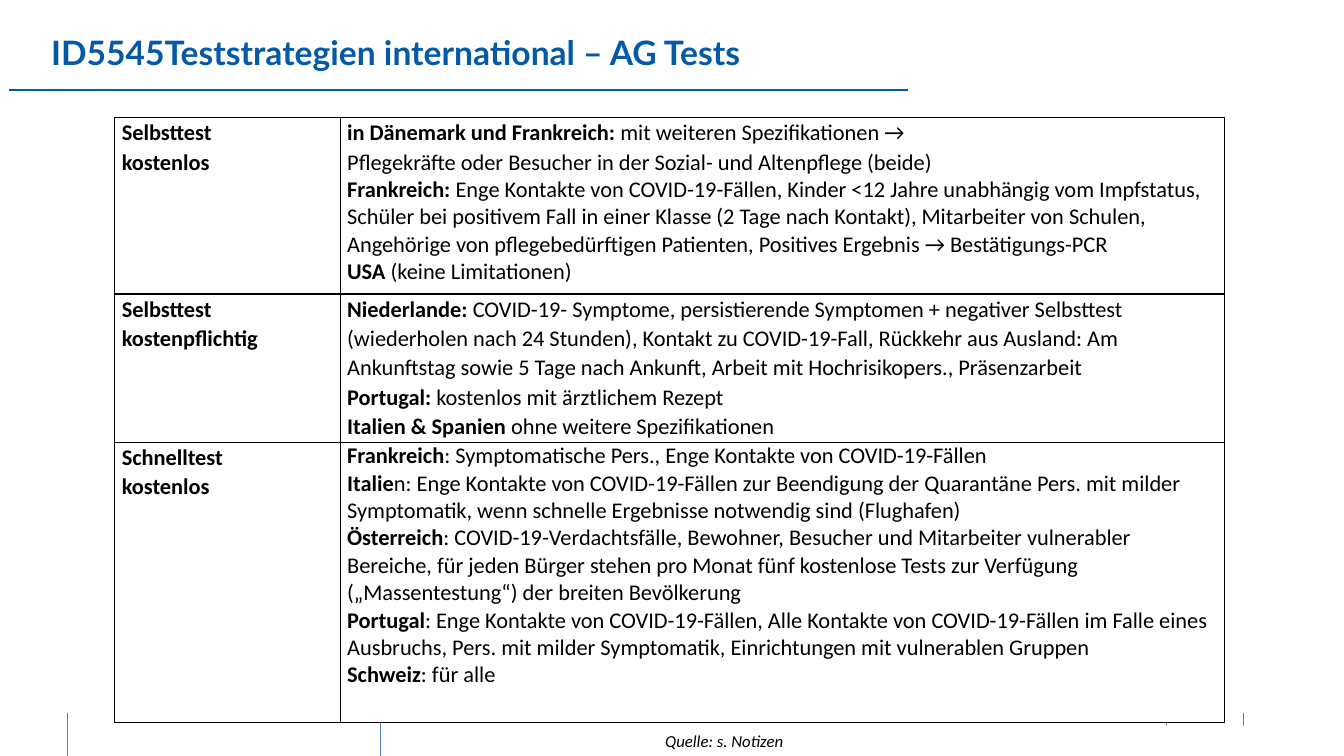
from dataclasses import dataclass

from lxml import etree
from pptx import Presentation
from pptx import util as u
from pptx.dml import color
from pptx.enum import shapes, text
from pptx.oxml import ns

Pt = u.Pt


@dataclass(frozen=True)
class Theme:
    """Colours, fonts and type sizes of the slide."""
    blue: str = "045AA6"
    tick: str = "4F81BD"
    ink: str = "000000"
    paper: str = "FFFFFF"
    head: str = "Lato"
    body: str = "Calibri"
    title_size: int = 24
    cell_size: int = 16
    source_size: int = 12
    loose: float = 1.07


T = Theme()

ROWS = [
    (126, ("Selbsttest", "kostenlos"), [
        (T.loose, "in Dänemark und Frankreich: ", "mit weiteren Spezifikationen →"),
        (T.loose, "", "Pflegekräfte oder Besucher in der Sozial- und Altenpflege (beide)"),
        (1.0, "Frankreich: ", "Enge Kontakte von COVID-19-Fällen, Kinder <12 Jahre unabhängig "
         "vom Impfstatus, Schüler bei positivem Fall in einer Klasse (2 Tage nach Kontakt), "
         "Mitarbeiter von Schulen, Angehörige von pflegebedürftigen Patienten, "
         "Positives Ergebnis → Bestätigungs-PCR"),
        (1.0, "USA", " (keine Limitationen)"),
    ]),
    (106, ("Selbsttest", "kostenpflichtig"), [
        (T.loose, "Niederlande: ", "COVID-19- Symptome, persistierende Symptomen + negativer "
         "Selbsttest (wiederholen nach 24 Stunden), Kontakt zu COVID-19-Fall, Rückkehr aus "
         "Ausland: Am Ankunftstag sowie 5 Tage nach Ankunft, Arbeit mit Hochrisikopers., "
         "Präsenzarbeit"),
        (T.loose, "Portugal: ", "kostenlos mit ärztlichem Rezept"),
        (T.loose, "Italien & Spanien ", "ohne weitere Spezifikationen"),
    ]),
    (200, ("Schnelltest", "kostenlos"), [
        (1.0, "Frankreich", ": Symptomatische Pers., Enge Kontakte von COVID-19-Fällen"),
        (1.0, "Italie", "n: Enge Kontakte von COVID-19-Fällen zur Beendigung der Quarantäne "
         "Pers. mit milder Symptomatik, wenn schnelle Ergebnisse notwendig sind (Flughafen)"),
        (1.0, "Österreich", ": COVID-19-Verdachtsfälle, Bewohner, Besucher und Mitarbeiter "
         "vulnerabler Bereiche, für jeden Bürger stehen pro Monat fünf kostenlose Tests zur "
         "Verfügung („Massentestung“) der breiten Bevölkerung"),
        (1.0, "Portugal", ": Enge Kontakte von COVID-19-Fällen, Alle Kontakte von "
         "COVID-19-Fällen im Falle eines Ausbruchs, Pers. mit milder Symptomatik, "
         "Einrichtungen mit vulnerablen Gruppen"),
        (1.0, "Schweiz", ": für alle"),
    ]),
]


def rgb(code):
    """Turn a hex code into a colour."""
    return color.RGBColor.from_string(code)


def assign(obj, fmt):
    """Set every attribute named in a dict of format values."""
    for name, value in fmt.items():
        setattr(obj, name, value)


def add_run(p, words, ink, **fmt):
    """Append a formatted run to a paragraph."""
    r = p.add_run()
    r.text = words
    assign(r.font, fmt)
    r.font.color.rgb = rgb(ink)


def add_line(s, x1, y1, x2, y2, ink, width):
    """Draw a straight line without a shadow."""
    line = s.shapes.add_connector(shapes.MSO_CONNECTOR.STRAIGHT, Pt(x1), Pt(y1), Pt(x2), Pt(y2))
    line.line.color.rgb = rgb(ink)
    line.line.width = Pt(width)
    etree.SubElement(line._element.spPr, ns.qn("a:effectLst"))


def add_ticks(s, x, y, w, h):
    """Draw the vertical footer marks across the given box."""
    for offset in (0, 224, 785, w):
        add_line(s, x + offset, y, x + offset, y + h, T.tick, 0.5)


def add_title(s, x, y, w, h):
    """Place the heading and the rule below it."""
    tf = s.shapes.add_textbox(Pt(x), Pt(y), Pt(w), Pt(h)).text_frame
    assign(tf, dict(word_wrap=True, vertical_anchor=text.MSO_ANCHOR.MIDDLE, margin_left=0,
                    margin_right=0, margin_top=0, margin_bottom=0))
    add_run(tf.paragraphs[0], "ID5545Teststrategien international – AG Tests", T.blue,
            name=T.head, size=Pt(T.title_size), bold=True)
    add_line(s, x - 30, y + h + 1.5, x + 612, y + h + 1.5, T.blue, 1.5)


def add_source(s, x, y, w, h):
    """Place the white strip with the source note."""
    sp = s.shapes.add_shape(shapes.MSO_SHAPE.RECTANGLE, Pt(x), Pt(y), Pt(w), Pt(h))
    sp.shadow.inherit = False
    sp.fill.solid()
    sp.fill.fore_color.rgb = rgb(T.paper)
    sp.line.fill.background()
    assign(sp.text_frame, dict(word_wrap=True, vertical_anchor=text.MSO_ANCHOR.TOP))
    p = sp.text_frame.paragraphs[0]
    p.alignment = text.PP_ALIGN.LEFT
    add_run(p, "Quelle: s. Notizen", T.ink, name=T.body, size=Pt(T.source_size), italic=True)


def add_borders(cell):
    """Outline a cell on all four sides."""
    tcPr = cell._tc.get_or_add_tcPr()
    for i, side in enumerate(("lnL", "lnR", "lnT", "lnB")):
        ln = etree.Element(ns.qn(f"a:{side}"), w=str(Pt(1)))
        fill = etree.SubElement(ln, ns.qn("a:solidFill"))
        etree.SubElement(fill, ns.qn("a:srgbClr"), val=T.ink)
        tcPr.insert(i, ln)


def fill_cell(cell, paras):
    """Write paragraphs of a bold lead and plain text into a cell."""
    assign(cell, dict(margin_left=Pt(5), margin_right=Pt(5), margin_top=0, margin_bottom=0))
    cell.fill.solid()
    cell.fill.fore_color.rgb = rgb(T.paper)
    add_borders(cell)
    tf = cell.text_frame
    for i, (spacing, lead, rest) in enumerate(paras):
        p = tf.add_paragraph() if i else tf.paragraphs[0]
        p.line_spacing = spacing
        for words, bold in ((lead, True), (rest, False)):
            if words:
                add_run(p, words, T.ink, name=T.body, size=Pt(T.cell_size), bold=bold)


def add_test_table(s, x, y, w, h):
    """Place the table of test types and countries."""
    table = s.shapes.add_table(len(ROWS), 2, Pt(x), Pt(y), Pt(w), Pt(h)).table
    assign(table, dict(first_row=False, horz_banding=False))
    table.columns[0].width = Pt(161)
    table.columns[1].width = Pt(w - 161)
    for i, (height, kind, countries) in enumerate(ROWS):
        table.rows[i].height = Pt(height)
        fill_cell(table.cell(i, 0), [(T.loose, word, "") for word in kind])
        fill_cell(table.cell(i, 1), countries)


def main():
    """Build and save the slide."""
    prs = Presentation()
    assign(prs, dict(slide_width=Pt(960), slide_height=Pt(540)))
    s = prs.slides.add_slide(prs.slide_layouts[6])
    add_ticks(s, 48, 509, 840, 31)
    add_title(s, 36.5, 12, 838, 50.5)
    add_source(s, 468, 518.4, 492, 21.6)
    add_test_table(s, 82, 84, 792.5, 432)
    prs.save("out.pptx")


if __name__ == "__main__":
    main()
